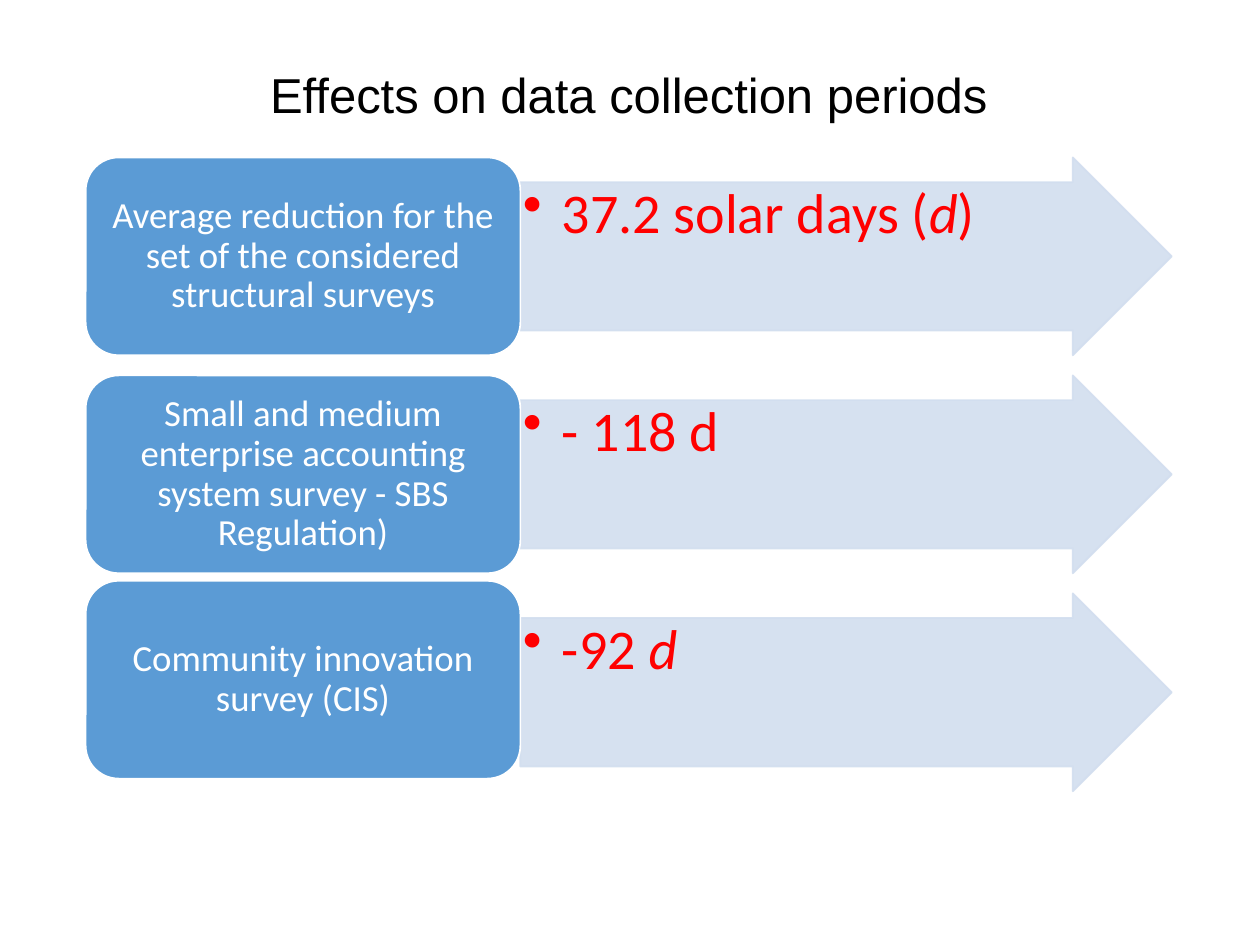
from dataclasses import dataclass

from lxml import etree
from pptx import Presentation
from pptx import util as u
from pptx.dml.color import RGBColor
from pptx.enum import shapes, text
from pptx.oxml import ns

ROW_LEFT = 0.68
ROW_HEIGHT = 1.57
FIRST_TOP = 1.25
ROW_PITCH = 1.73
LABEL_WIDTH = 3.45
ARROW_LEFT = ROW_LEFT + LABEL_WIDTH
ARROW_WIDTH = 5.17


@dataclass
class Effect:
    label: str
    result: list[str]
    label_shift: float = 0


EFFECTS = [
    Effect("Average reduction for the set of the considered structural surveys",
           ["37.2 solar days (", "d", ")"]),
    Effect("Small and medium enterprise accounting system survey - SBS Regulation)",
           ["- 118 d"]),
    Effect("Community innovation survey (CIS)", ["-92 ", "d"], -0.1),
]


def colour(value: str) -> RGBColor:
    return RGBColor.from_string(value)


def style_runs(para, font: str, size: float, value: str) -> None:
    para.line_spacing = 0.9
    for span in para.runs:
        span.font.name = font
        span.font.size = u.Pt(size)
        span.font.color.rgb = colour(value)


def set_frame(box, anchor, side: float, edge: float):
    frame = box.text_frame
    frame.word_wrap = True
    frame.vertical_anchor = anchor
    frame.margin_left = frame.margin_right = u.Inches(side)
    frame.margin_top = frame.margin_bottom = u.Inches(edge)
    return frame


def add_block(page, kind, left: float, top: float, width: float, fill: str, line: str):
    block = page.shapes.add_shape(kind, u.Inches(left), u.Inches(top),
                                  u.Inches(width), u.Inches(ROW_HEIGHT))
    block.shadow.inherit = False
    block.fill.solid()
    block.fill.fore_color.rgb = colour(fill)
    block.line.color.rgb = colour(line)
    block.line.width = u.Pt(1)
    return block


def set_opacity(block, percent: int) -> None:
    for tint in block.element.spPr.iter(ns.qn("a:srgbClr")):
        etree.SubElement(tint, ns.qn("a:alpha"), val=str(percent * 1000))


def add_bullet(para) -> None:
    props = para._p.get_or_add_pPr()
    props.set("marL", str(u.Inches(0.31)))
    props.set("indent", str(u.Inches(-0.31)))
    etree.SubElement(props, ns.qn("a:buChar"), char="•")


def add_arrow(page, top: float, result: list[str]) -> None:
    arrow = add_block(page, shapes.MSO_SHAPE.RIGHT_ARROW, ARROW_LEFT, top,
                      ARROW_WIDTH, "D2DEEF", "D2DEEF")
    arrow.adjustments[0] = 0.75
    arrow.adjustments[1] = 0.5
    set_opacity(arrow, 90)
    para = set_frame(arrow, text.MSO_ANCHOR.TOP, 0.02, 0.02).paragraphs[0]
    para.level = 1
    add_bullet(para)
    para.alignment = text.PP_ALIGN.LEFT
    for index, part in enumerate(result):
        span = para.add_run()
        span.text = part
        span.font.italic = index == 1
    style_runs(para, "Calibri", 32, "FF0000")


def add_label(page, top: float, label: str) -> None:
    block = add_block(page, shapes.MSO_SHAPE.ROUNDED_RECTANGLE, ROW_LEFT, top,
                      LABEL_WIDTH, "5B9BD5", "FFFFFF")
    para = set_frame(block, text.MSO_ANCHOR.MIDDLE, 0.09, 0.04).paragraphs[0]
    para.text = label
    para.alignment = text.PP_ALIGN.CENTER
    style_runs(para, "Calibri", 21, "FFFFFF")


def add_title(page, title: str) -> None:
    box = page.shapes.add_textbox(u.Inches(ROW_LEFT), u.Inches(0.3),
                                  u.Inches(LABEL_WIDTH + ARROW_WIDTH), u.Inches(0.95))
    para = set_frame(box, text.MSO_ANCHOR.MIDDLE, 0.1, 0.05).paragraphs[0]
    para.text = title
    para.alignment = text.PP_ALIGN.CENTER
    style_runs(para, "Arial", 28, "000000")


def main() -> None:
    deck = Presentation()
    deck.slide_width = u.Inches(10)
    deck.slide_height = u.Inches(7.5)
    page = deck.slides.add_slide(deck.slide_layouts[6])
    add_title(page, "Effects on data collection periods")
    for row, effect in enumerate(EFFECTS):
        top = FIRST_TOP + row * ROW_PITCH
        add_arrow(page, top, effect.result)
        add_label(page, top + effect.label_shift, effect.label)
    deck.save("out.pptx")


if __name__ == "__main__":
    main()
